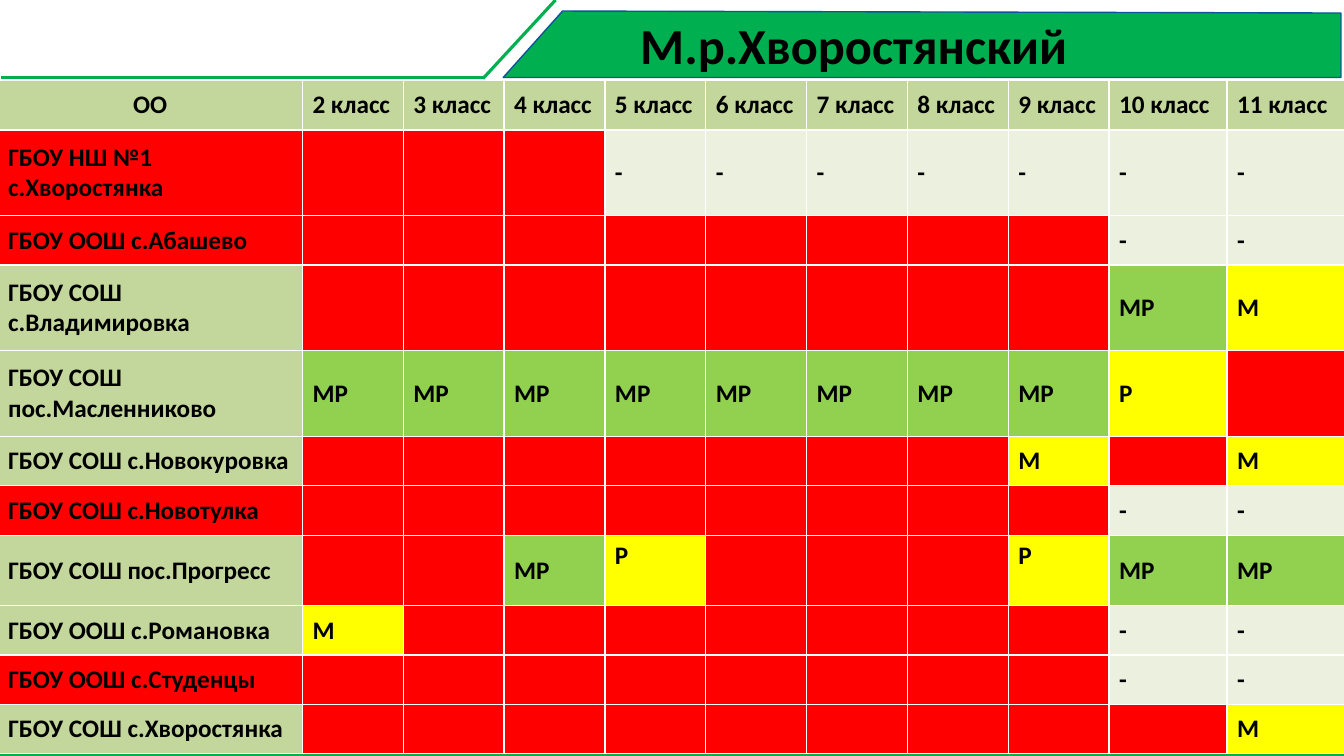
"""Build the class-by-class school results slide for the Хворостянский district."""
import pptx
import pptx.dml.color
import pptx.enum.shapes
import pptx.enum.text
import pptx.oxml
import pptx.util
from pptx.util import Inches

TITLE = "М.р.Хворостянский"
HEADERS = ["ОО"] + [f"{grade} класс" for grade in range(2, 12)]
SCHOOLS = [
    ("ГБОУ НШ №1 с.Хворостянка", 0.85, [""] * 3 + ["-"] * 7),
    ("ГБОУ ООШ с.Абашево", 0.49, [""] * 8 + ["-"] * 2),
    ("ГБОУ СОШ с.Владимировка", 0.85, [""] * 8 + ["МР", "М"]),
    ("ГБОУ СОШ пос.Масленниково", 0.85, ["МР"] * 8 + ["Р", ""]),
    ("ГБОУ СОШ с.Новокуровка", 0.49, [""] * 7 + ["М", "", "М"]),
    ("ГБОУ СОШ с.Новотулка", 0.49, [""] * 8 + ["-"] * 2),
    ("ГБОУ СОШ пос.Прогресс", 0.7, ["", "", "МР", "Р", "", "", "", "Р", "МР", "МР"]),
    ("ГБОУ ООШ с.Романовка", 0.49, ["М"] + [""] * 7 + ["-"] * 2),
    ("ГБОУ ООШ с.Студенцы", 0.49, [""] * 8 + ["-"] * 2),
    ("ГБОУ СОШ с.Хворостянка", 0.49, [""] * 9 + ["М"]),
]
TOP_ALIGNED_SCHOOL = "ГБОУ СОШ пос.Прогресс"
HEADER_HEIGHT = 0.49
COLUMN_WIDTHS = [3.02] + [1] * 8 + [1.17] * 2
BANNER = [(5.58, 0.11), (13.3, 0.13), (13.3, 0.77), (4.99, 0.77)]
GREEN_LINES = [(5.51, 0, 4.79, 0.78), (4.8, 0.77, 0.01, 0.77)]
COLORS = {
    "banner": "00B050", "outline": "0C549E", "text": "000000", "label": "C3D69B",
    "none": "FF0000", "absent": "EBF1DE", "both": "92D050", "one": "FFFF00",
}
MARK_COLORS = {"": "none", "-": "absent", "МР": "both", "М": "one", "Р": "one"}


def rgb(name):
    return pptx.dml.color.RGBColor.from_string(COLORS[name])


def paint(fill, name):
    fill.solid()
    fill.fore_color.rgb = rgb(name)


def write(paragraph, text, size):
    run = paragraph.add_run()
    run.text = text
    run.font.name = "Calibri"
    run.font.size = pptx.util.Pt(size)
    run.font.bold = True
    run.font.color.rgb = rgb("text")


def add_decoration(slide):
    points = [(Inches(x), Inches(y)) for x, y in BANNER]
    builder = slide.shapes.build_freeform(*points[0], scale=1.0)
    builder.add_line_segments(points[1:], close=True)
    banner = builder.convert_to_shape()
    banner.shadow.inherit = False
    paint(banner.fill, "banner")
    banner.line.color.rgb = rgb("outline")
    banner.line.width = pptx.util.Pt(1)

    footer = slide.shapes.add_shape(
        pptx.enum.shapes.MSO_SHAPE.RECTANGLE, 0, Inches(7.3), Inches(13.33), Inches(0.2))
    footer.shadow.inherit = False
    paint(footer.fill, "banner")
    footer.line.fill.background()

    for ends in GREEN_LINES:
        line = slide.shapes.add_connector(
            pptx.enum.shapes.MSO_CONNECTOR.STRAIGHT, *map(Inches, ends))
        line.line.color.rgb = rgb("banner")
        line.line.width = pptx.util.Pt(2.25)
        properties = line.element.spPr
        properties.append(pptx.oxml.parse_xml(
            '<a:effectLst xmlns:a="http://schemas.openxmlformats.org/drawingml/2006/main"/>'))


def fill_cell(cell, text, color):
    paint(cell.fill, color)
    cell.vertical_anchor = pptx.enum.text.MSO_ANCHOR.MIDDLE
    if text:
        write(cell.text_frame.paragraphs[0], text, 18)


def add_results(slide):
    heights = [HEADER_HEIGHT] + [height for _, height, _ in SCHOOLS]
    frame = slide.shapes.add_table(
        len(heights), len(COLUMN_WIDTHS), Inches(-0.02), Inches(0.8),
        Inches(sum(COLUMN_WIDTHS)), Inches(sum(heights)))
    table = frame.table
    for column, width in zip(table.columns, COLUMN_WIDTHS):
        column.width = Inches(width)
    for row, height in zip(table.rows, heights):
        row.height = Inches(height)

    for index, header in enumerate(HEADERS):
        fill_cell(table.cell(0, index), header, "label")
    table.cell(0, 0).text_frame.paragraphs[0].alignment = pptx.enum.text.PP_ALIGN.CENTER

    for row, (school, _, marks) in enumerate(SCHOOLS, start=1):
        has_results = any(mark not in ("", "-") for mark in marks)
        fill_cell(table.cell(row, 0), school, "label" if has_results else "none")
        for column, mark in enumerate(marks, start=1):
            cell = table.cell(row, column)
            fill_cell(cell, mark, MARK_COLORS[mark])
            if school == TOP_ALIGNED_SCHOOL and mark == "Р":
                cell.vertical_anchor = pptx.enum.text.MSO_ANCHOR.TOP


def place_title(slide):
    title = slide.shapes.title
    title.left, title.top = Inches(6.25), Inches(0.09)
    title.width, title.height = Inches(5.42), Inches(0.71)
    frame = title.text_frame
    frame.word_wrap = True
    frame.auto_size = pptx.enum.text.MSO_AUTO_SIZE.NONE
    frame.vertical_anchor = pptx.enum.text.MSO_ANCHOR.TOP
    frame.paragraphs[0].alignment = pptx.enum.text.PP_ALIGN.LEFT
    write(frame.paragraphs[0], TITLE, 36)
    title.element.getparent().append(title.element)


def main():
    presentation = pptx.Presentation()
    presentation.slide_width = Inches(13.33)
    presentation.slide_height = Inches(7.5)
    slide = presentation.slides.add_slide(presentation.slide_layouts[5])
    add_decoration(slide)
    add_results(slide)
    place_title(slide)
    presentation.save("out.pptx")


if __name__ == "__main__":
    main()
